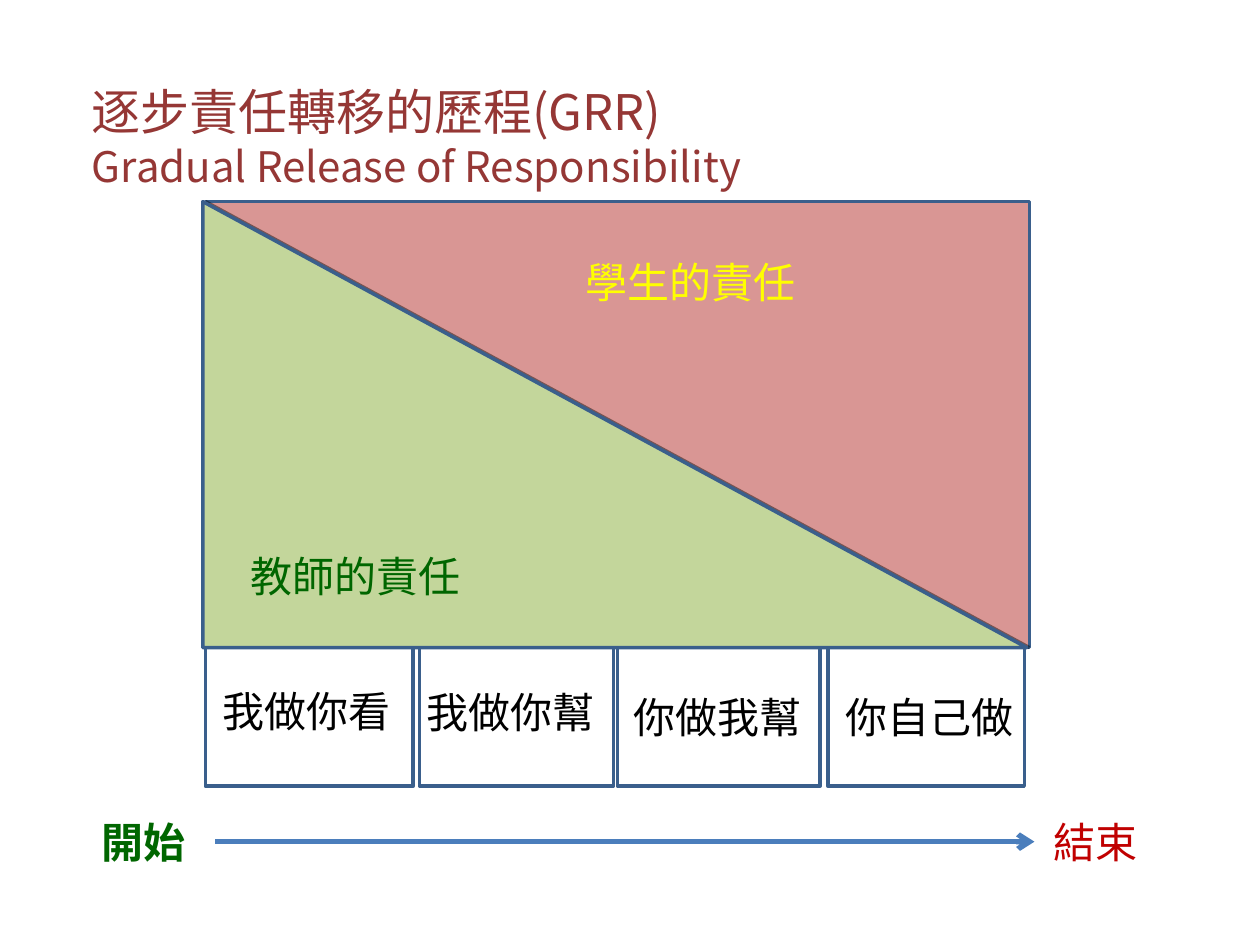
import pptx
import pptx.dml.color
import pptx.enum.shapes
import pptx.enum.text
import pptx.oxml.ns
import pptx.util
from lxml import etree

Inches = pptx.util.Inches
Pt = pptx.util.Pt
KINDS = pptx.enum.shapes.MSO_SHAPE
FONT = "Noto Sans CJK SC"
EDGE = "3A5F8C"
GREEN = "006600"


def tint(hue):
    """Turn a hex string into a colour."""
    return pptx.dml.color.RGBColor.from_string(hue)


def child(node, tag, **attrs):
    """Append a drawing element to a node."""
    return etree.SubElement(node, pptx.oxml.ns.qn(tag), **attrs)


def add_run(para, text, size, hue, bold=False):
    """Add one styled run to a paragraph."""
    run = para.add_run()
    run.text = text
    run.font.size = Pt(size)
    run.font.bold = bold
    run.font.color.rgb = tint(hue)
    run.font.name = FONT
    child(run._r.get_or_add_rPr(), "a:ea", typeface=FONT)


def add_title(slide):
    """Place and fill the title in two lines."""
    title = slide.shapes.title
    title.left, title.top = Inches(0.63), Inches(0.6)
    title.width, title.height = Inches(5.98), Inches(0.98)
    frame = title.text_frame
    frame.auto_size = pptx.enum.text.MSO_AUTO_SIZE.NONE
    frame.vertical_anchor = pptx.enum.text.MSO_ANCHOR.TOP
    lines = [("逐步責任轉移的歷程(GRR)", 28),
             ("Gradual Release of Responsibility", 24)]
    for i, (text, size) in enumerate(lines):
        para = frame.add_paragraph() if i else frame.paragraphs[0]
        para.alignment = pptx.enum.text.PP_ALIGN.LEFT
        add_run(para, text, size, "953735")


def add_label(slide, text, left, top, width, hue="000000", bold=False):
    """Add a one-line label."""
    box = slide.shapes.add_textbox(
        Inches(left), Inches(top), Inches(width), Inches(0.5))
    box.text_frame.word_wrap = True
    add_run(box.text_frame.paragraphs[0], text, 24, hue, bold)
    return box


def add_block(slide, kind, left, top, width, height, fill):
    """Add a filled and outlined shape."""
    shape = slide.shapes.add_shape(
        kind, Inches(left), Inches(top), Inches(width), Inches(height))
    shape.shadow.inherit = False
    shape.fill.solid()
    shape.fill.fore_color.rgb = tint(fill)
    shape.line.color.rgb = tint(EDGE)
    shape.line.width = Pt(2)


def add_line(slide, start, end, hue, width):
    """Add a straight line without shadow."""
    line = slide.shapes.add_connector(
        pptx.enum.shapes.MSO_CONNECTOR.STRAIGHT,
        *map(Inches, start + end))
    line.line.color.rgb = tint(hue)
    line.line.width = Pt(width)
    child(line._element.spPr, "a:effectLst")
    return line


def add_steps(slide):
    """Add the row of four steps."""
    steps = [("我做你看", 1.63, 1.65, 1.67, 5.39, 1.62),
             ("我做你幫", 3.33, 1.54, 3.29, 5.4, 1.54),
             ("你做我幫", 4.9, 1.61, 4.93, 5.44, 1.66),
             ("你自己做", 6.57, 1.56, 6.61, 5.44, 1.62)]
    for text, left, width, *place in steps:
        add_block(slide, KINDS.RECTANGLE, left, 5.14, width, 1.1, "FFFFFF")
        add_label(slide, text, *place)


def add_shares(slide):
    """Add the student and teacher shares."""
    add_block(slide, KINDS.RECTANGLE, 1.63, 1.6, 6.54, 3.54, "D99694")
    line = add_line(slide, (1.63, 1.6), (8.17, 5.14), "000000", 2)
    hue = line._element.spPr.find(".//" + pptx.oxml.ns.qn("a:srgbClr"))
    child(hue, "a:alpha", val="43000")
    add_block(slide, KINDS.RIGHT_TRIANGLE, 1.61, 1.6, 6.54, 3.54, "C3D69B")
    add_label(slide, "教師的責任", 1.89, 4.32, 3.21, GREEN)
    add_label(slide, "學生的責任", 4.55, 1.99, 3.31, "FFFF00")


def add_course(slide):
    """Add the arrow from start to end."""
    add_label(slide, "結束", 8.26, 6.43, 1, "C00000")
    start = add_label(slide, "開始", 0.71, 6.43, 1, GREEN, True)
    arrow = add_line(slide, (1.71, 6.68), (8.21, 6.68), "4B7EBC", 3)
    arrow.begin_connect(start, 3)
    child(arrow.line._get_or_add_ln(), "a:tailEnd", type="arrow")


def main():
    """Build and save the slide."""
    deck = pptx.Presentation()
    deck.slide_width, deck.slide_height = Inches(10), Inches(7.5)
    slide = deck.slides.add_slide(deck.slide_layouts[5])
    add_title(slide)
    add_steps(slide)
    add_shares(slide)
    add_course(slide)
    deck.save("out.pptx")


if __name__ == "__main__":
    main()
